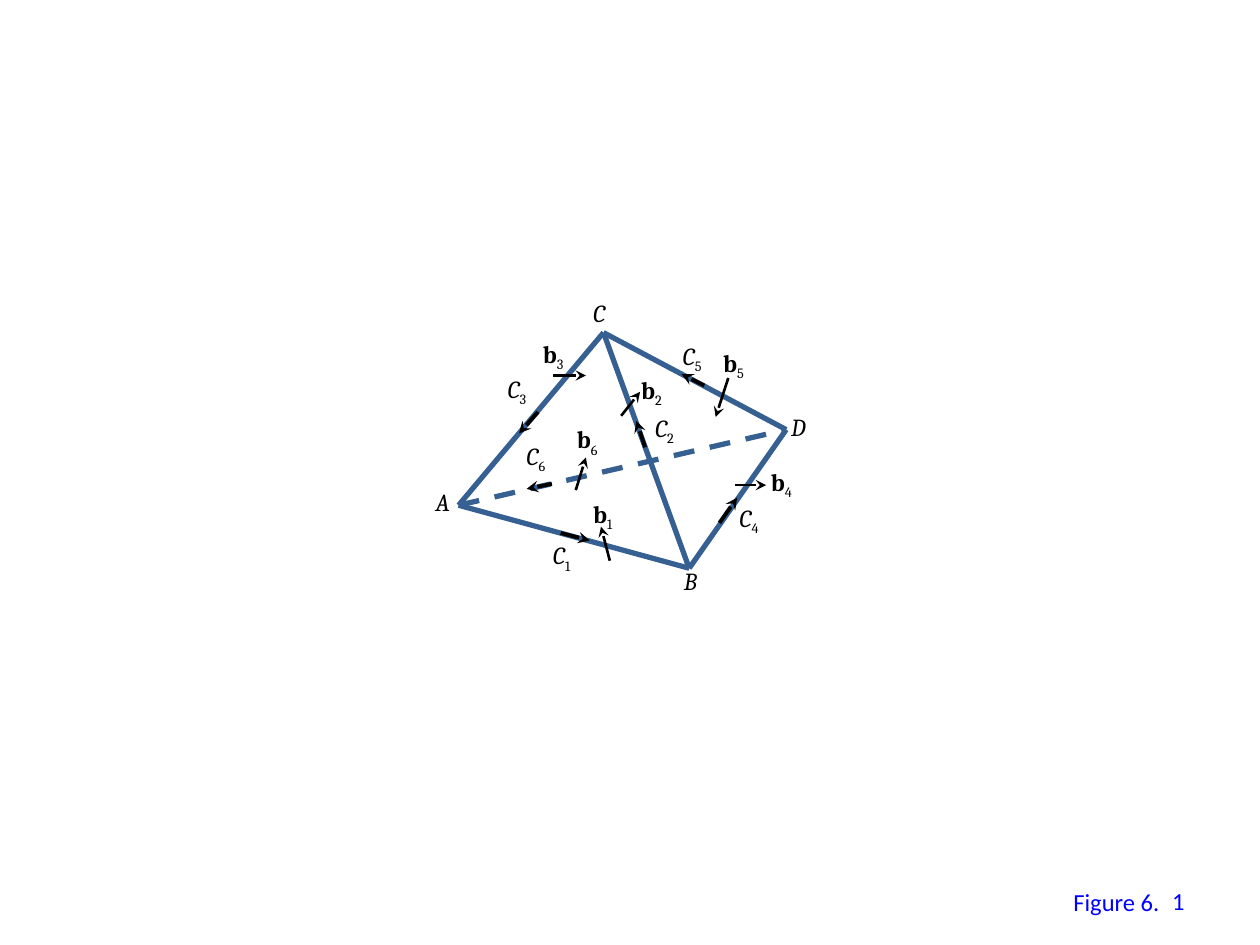
from lxml import etree
from pptx import Presentation
from pptx import util as u
from pptx.dml.color import RGBColor
from pptx.enum import dml, shapes, text
from pptx.oxml import ns

EDGE_BLUE = RGBColor(0x37, 0x60, 0x92)
BLACK = RGBColor(0, 0, 0)
CAPTION_BLUE = RGBColor(0, 0, 0xFF)

VERTICES = {"A": (3.64, 4.01), "B": (5.47, 4.51), "C": (4.79, 2.64), "D": (6.24, 3.41)}
SOLID_EDGES = ["DC", "DB", "CB", "CA", "AB"]
HIDDEN_EDGE = "AD"

# Left, top and width of each vertex label
VERTEX_LABELS = {"A": (3.36, 3.82, 0.37), "B": (5.33, 4.44, 0.37),
                 "C": (4.61, 2.32, 0.39), "D": (6.18, 3.22, 0.4)}

# Per edge: direction arrow and place of its label C
CURVES = {
    "1": ((4.45, 4.23), (4.68, 4.29), (4.29, 4.24)),
    "2": ((5.12, 3.55), (5.05, 3.34), (5.1, 3.23)),
    "3": ((4.27, 3.27), (4.12, 3.44), (3.93, 2.92)),
    "4": ((5.71, 4.15), (5.85, 3.95), (5.77, 3.94)),
    "5": ((5.59, 3.06), (5.41, 2.97), (5.32, 2.66)),
    "6": ((4.38, 3.84), (4.18, 3.88), (4.08, 3.45)),
}

# Per edge: binormal arrow and place of its label b
BINORMALS = {
    "1": ((4.84, 4.45), (4.77, 4.18), (4.61, 3.91)),
    "2": ((4.93, 3.3), (5.08, 3.11), (4.99, 2.93)),
    "3": ((4.39, 2.98), (4.65, 2.98), (4.21, 2.64)),
    "4": ((5.83, 3.85), (6.08, 3.85), (6.02, 3.66)),
    "5": ((5.78, 3), (5.68, 3.31), (5.64, 2.71)),
    "6": ((4.57, 3.89), (4.65, 3.63), (4.48, 3.32)),
}


def add_line(page, start, end, color, width, dashed=False, arrow=False):
    points = [u.Inches(value) for value in (*start, *end)]
    line = page.shapes.add_connector(shapes.MSO_CONNECTOR.STRAIGHT, *points)
    line.line.color.rgb = color
    line.line.width = u.Pt(width)
    if dashed:
        line.line.dash_style = dml.MSO_LINE.DASH
    properties = line._element.spPr
    if arrow:
        outline = properties.find(ns.qn("a:ln"))
        etree.SubElement(outline, ns.qn("a:tailEnd"), type="stealth")
    etree.SubElement(properties, ns.qn("a:effectLst"))


def add_box(page, left, top, width, height=0.34):
    box = page.shapes.add_textbox(*map(u.Inches, (left, top, width, height)))
    box.text_frame.word_wrap = False
    box.text_frame.auto_size = text.MSO_AUTO_SIZE.SHAPE_TO_FIT_TEXT
    return box


def add_span(box, words, font="Cambria", color=BLACK, bold=False, italic=False):
    span = box.text_frame.paragraphs[0].add_run()
    span.text = words
    span.font.name = font
    span.font.size = u.Pt(14)
    span.font.color.rgb = color
    span.font.bold = bold
    span.font.italic = italic
    return span


def add_symbol(page, place, width, letter, index, **style):
    box = add_box(page, *place, width)
    add_span(box, letter, **style)
    subscript = add_span(box, index)
    subscript.font._element.set("baseline", "-25000")


def add_tetrahedron(page):
    for start, end in SOLID_EDGES:
        add_line(page, VERTICES[start], VERTICES[end], EDGE_BLUE, 3)
    start, end = HIDDEN_EDGE
    add_line(page, VERTICES[start], VERTICES[end], EDGE_BLUE, 3, dashed=True)
    for name, place in VERTEX_LABELS.items():
        add_span(add_box(page, *place), name, italic=True)


def add_caption(page):
    caption = add_box(page, 8.42, 6.99, 0.89)
    add_span(caption, "Figure 6.", "Calibri", CAPTION_BLUE)
    number = add_box(page, 7.17, 6.95, 2.33, 0.4)
    number.text_frame.word_wrap = True
    number.text_frame.auto_size = text.MSO_AUTO_SIZE.NONE
    number.text_frame.vertical_anchor = text.MSO_ANCHOR.MIDDLE
    number.text_frame.paragraphs[0].alignment = text.PP_ALIGN.RIGHT
    add_span(number, "1", "Calibri", CAPTION_BLUE)


def main():
    deck = Presentation()
    deck.slide_width, deck.slide_height = u.Inches(10), u.Inches(7.5)
    page = deck.slides.add_slide(deck.slide_layouts[6])

    add_caption(page)
    add_tetrahedron(page)

    # Directions along the edges
    for index, (start, end, place) in CURVES.items():
        add_line(page, start, end, BLACK, 2.25, arrow=True)
        add_symbol(page, place, 0.42, "C", index, italic=True)

    # Binormals across the edges
    for index, (start, end, place) in BINORMALS.items():
        add_line(page, start, end, BLACK, 1.5, arrow=True)
        add_symbol(page, place, 0.38, "b", index, bold=True)

    deck.save("out.pptx")


if __name__ == "__main__":
    main()
